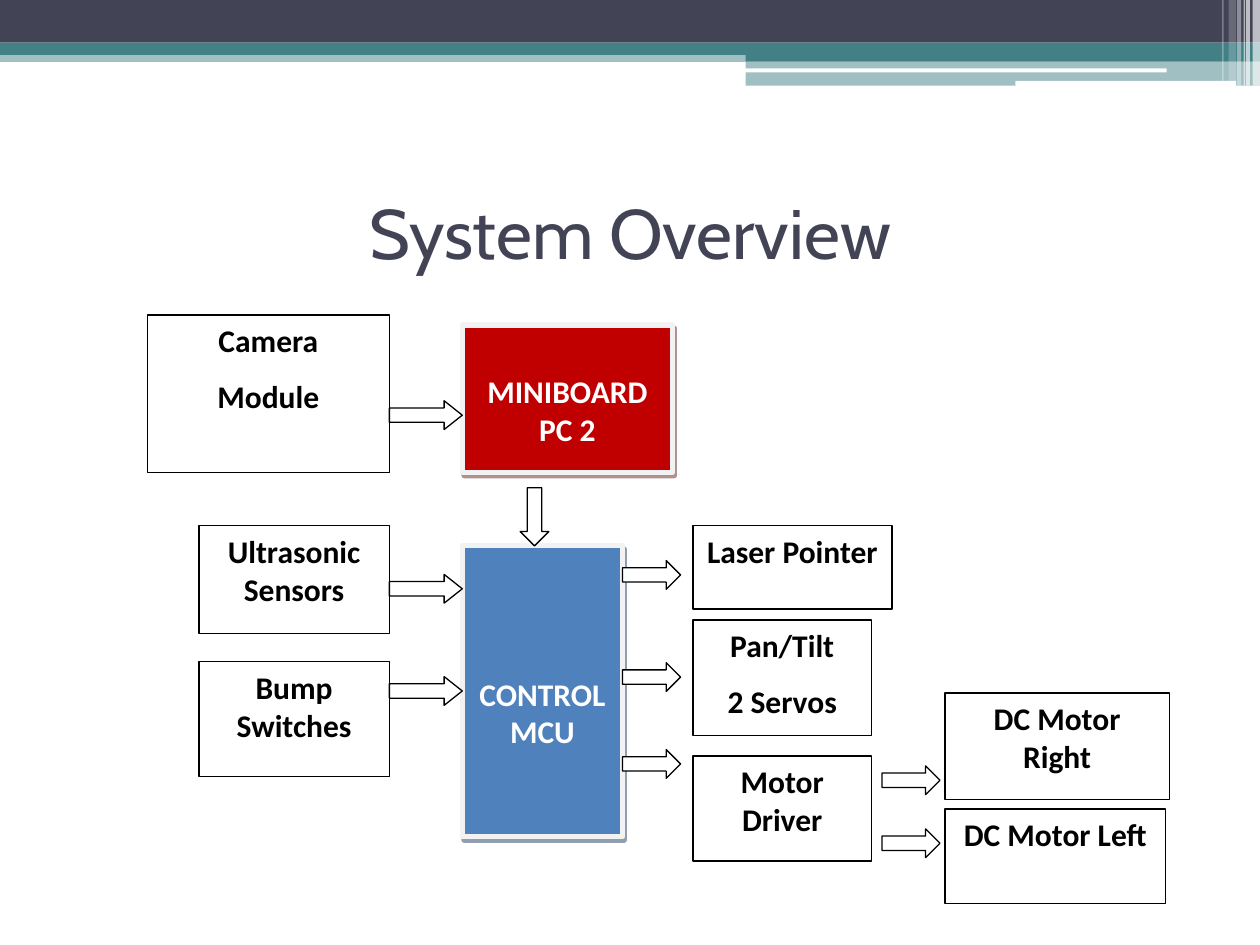
from lxml import etree
from pptx import Presentation
from pptx.dml.color import RGBColor
from pptx.enum.shapes import MSO_SHAPE
from pptx.enum.text import MSO_ANCHOR, PP_ALIGN
from pptx.oxml.ns import qn
from pptx.util import Cm, Pt

RECT, ROUND = MSO_SHAPE.RECTANGLE, MSO_SHAPE.ROUNDED_RECTANGLE
PROCESS, ARROW = MSO_SHAPE.FLOWCHART_PROCESS, MSO_SHAPE.RIGHT_ARROW
CENTER, TOP, MIDDLE = PP_ALIGN.CENTER, MSO_ANCHOR.TOP, MSO_ANCHOR.MIDDLE

WHITE = RGBColor(0xFF, 0xFF, 0xFF)
BLACK = RGBColor(0x00, 0x00, 0x00)
NAVY = RGBColor(0x42, 0x44, 0x56)
TEAL = RGBColor(0x43, 0x80, 0x86)
BLUE = RGBColor(0x4F, 0x81, 0xBD)
RED = RGBColor(0xC0, 0x00, 0x00)
FRAME = RGBColor(0xF2, 0xF2, 0xF2)
BLUE_SHADOW = RGBColor(0x24, 0x3F, 0x60)
RED_SHADOW = RGBColor(0x62, 0x24, 0x23)

# shape, left, top, width, height (cm), colour, opacity in percent
BANDS = [
    (RECT, 0, 1.02, 25.4, 0.23, TEAL, 50),
    (RECT, 0, 0, 25.4, 0.86, NAVY, 100),
    (RECT, 0, 0.86, 25.4, 0.25, TEAL, 100),
    (RECT, 15.03, 0.99, 10.37, 0.24, TEAL, 100),
    (RECT, 15.03, 1.23, 10.37, 0.5, TEAL, 50),
    (ROUND, 15.01, 1.38, 8.51, 0.08, WHITE, 100),
    (ROUND, 20.47, 1.63, 4.45, 0.1, WHITE, 100),
]
# left, width, height (cm), opacity in percent
STRIPES = [
    (25.25, 0.15, 1.73, 65), (25.12, 0.08, 1.73, 65), (25.07, 0.03, 1.73, 60),
    (24.94, 0.08, 1.73, 40), (24.77, 0.15, 1.63, 20), (24.64, 0.03, 1.63, 30),
]
# text, left, top, width, height (cm)
BOXES = [
    ("Camera\nModule", 2.97, 6.35, 4.88, 3.18),
    ("Ultrasonic Sensors", 4.01, 10.59, 3.84, 2.18),
    ("Bump Switches", 4.01, 13.34, 3.84, 2.31),
    ("Laser Pointer", 13.97, 10.59, 4.01, 1.69),
    ("Pan/Tilt\n2 Servos", 13.97, 12.5, 3.6, 2.33),
    ("Motor Driver", 13.97, 15.24, 3.6, 2.12),
    ("DC Motor Right", 19.05, 13.97, 4.52, 2.15),
    ("DC Motor Left", 19.05, 16.31, 4.45, 1.91),
]
# left, width (cm), head length, tops (cm)
ARROW_COLUMNS = [
    (7.85, 1.47, 0.63, (8.08, 11.58, 13.64)),
    (12.55, 1.17, 0.5, (11.3, 13.36, 15.11)),
    (17.78, 1.17, 0.5, (15.44, 16.71)),
]


def add_shape(slide, kind, left, top, width, height, fill, line=None, weight=0.75):
    s = slide.shapes.add_shape(kind, Cm(left), Cm(top), Cm(width), Cm(height))
    s.shadow.inherit = False
    s.fill.solid()
    s.fill.fore_color.rgb = fill
    if line is None:
        s.line.fill.background()
    else:
        s.line.color.rgb = line
        s.line.width = Pt(weight)
    return s


def set_opacity(color, percent):
    etree.SubElement(color, qn("a:alpha")).set("val", str(percent * 1000))


def add_band(slide, kind, left, top, width, height, color, opacity):
    s = add_shape(slide, kind, left, top, width, height, color)
    if opacity < 100:
        set_opacity(s._element.spPr.find(".//" + qn("a:srgbClr")), opacity)


def write_label(s, text, color, top_inset=0.13):
    tf = s.text_frame
    tf.text = text
    tf.word_wrap = True
    tf.vertical_anchor = TOP
    tf.margin_top = Cm(top_inset)
    for p in tf.paragraphs:
        p.alignment = CENTER
        p.space_after = Pt(10)
        p.font.name = "Calibri"
        for r in p.runs:
            r.font.name = "Calibri"
            r.font.size = Pt(18)
            r.font.bold = True
            r.font.color.rgb = color


def add_box(slide, text, left, top, width, height):
    s = add_shape(slide, PROCESS, left, top, width, height, WHITE, BLACK)
    write_label(s, text, BLACK)


def add_board(slide, text, left, top, width, height, fill, shadow, top_inset):
    """Add a framed controller block with a half-transparent drop shadow."""
    s = add_shape(slide, PROCESS, left, top, width, height, fill, FRAME, 3)
    write_label(s, text, WHITE, top_inset)
    effects = s._element.spPr.find(qn("a:effectLst"))
    outer = etree.SubElement(effects, qn("a:outerShdw"), dist=str(Pt(2.2)),
                             dir=str(63 * 60000), algn="ctr", rotWithShape="0")
    color = etree.SubElement(outer, qn("a:srgbClr"), val=str(shadow))
    set_opacity(color, 50)


def add_arrow(slide, left, top, width, head, rotation=0):
    s = add_shape(slide, ARROW, left, top, width, 0.58, WHITE, BLACK)
    s.adjustments[1] = head
    s.rotation = rotation


def set_title(slide, text):
    title = slide.shapes.title
    title.left, title.top, title.width, title.height = Cm(1.27), Cm(3.18), Cm(22.86), Cm(2.97)
    tf = title.text_frame
    tf.text = text
    tf.vertical_anchor = MIDDLE
    p = tf.paragraphs[0]
    p.alignment = CENTER
    font = p.runs[0].font
    font.name = "Cabin"
    font.size = Pt(40)
    font.color.rgb = NAVY


def main():
    prs = Presentation()
    prs.slide_width, prs.slide_height = Cm(25.4), Cm(19.05)
    slide = prs.slides.add_slide(prs.slide_layouts[5])

    for band in BANDS:
        add_band(slide, *band)
    for left, width, height, opacity in STRIPES:
        add_band(slide, RECT, left, 0, width, height, WHITE, opacity)
    set_title(slide, "System Overview")

    add_board(slide, "CONTROL MCU", 9.32, 11, 3.23, 5.87, BLUE, BLUE_SHADOW, 2.6)
    add_board(slide, "MINIBOARD PC 2", 9.32, 6.55, 4.24, 2.97, RED, RED_SHADOW, 0.95)
    for box in BOXES:
        add_box(slide, *box)
    for left, width, head, tops in ARROW_COLUMNS:
        for top in tops:
            add_arrow(slide, left, top, width, head)
    add_arrow(slide, 10.19, 10.13, 1.17, 0.5, rotation=90)

    prs.save("out.pptx")


if __name__ == "__main__":
    main()
